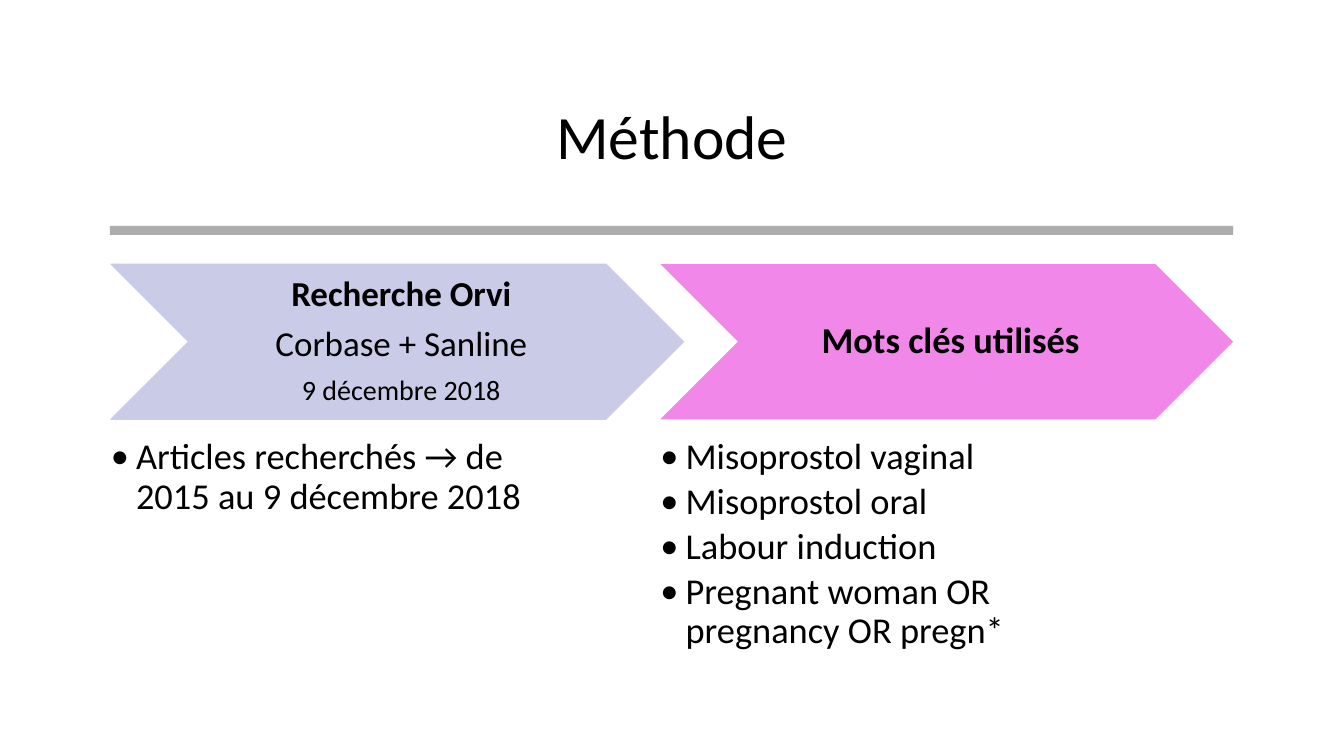
"""Build the "Méthode" slide: two chevrons with bulleted details below."""
from lxml import etree
from pptx import Presentation
from pptx import util as u
from pptx.dml.color import RGBColor
from pptx.enum import shapes, text
from pptx.oxml import ns


def paint(fill, color):
    fill.solid()
    fill.fore_color.rgb = RGBColor.from_string(color)


def write(tf, lines, margins, anchor, **fmt):
    tf.word_wrap = True
    tf.vertical_anchor = anchor
    for side, margin in zip(("left", "top", "right", "bottom"), margins):
        setattr(tf, f"margin_{side}", u.Inches(margin))
    for i, (line, size, bold) in enumerate(lines):
        p = tf.paragraphs[0] if i == 0 else tf.add_paragraph()
        p.line_spacing = 0.9
        for name, value in fmt.items():
            setattr(p, name, value)
        r = p.add_run()
        r.text = line
        for name, value in {"name": "Calibri", "size": u.Pt(size), "bold": bold}.items():
            setattr(r.font, name, value)
        paint(r.font.fill, "000000")


prs = Presentation()
prs.slide_width, prs.slide_height = u.Inches(13.33), u.Inches(7.5)
slide = prs.slides.add_slide(prs.slide_layouts[5])
CENTER, MIDDLE = text.PP_ALIGN.CENTER, text.MSO_ANCHOR.MIDDLE

title = slide.shapes.title
title.left, title.top, title.width, title.height = map(u.Inches, (0.95, 0.66, 11.43, 1.45))
write(title.text_frame, [("Méthode", 44, False)], (0.1, 0.05, 0.1, 0.05), MIDDLE,
      alignment=CENTER)

rule = slide.shapes.add_shape(
    shapes.MSO_SHAPE.RECTANGLE, *map(u.Inches, (1.09, 2.24, 11.14, 0.09)))
rule.shadow.inherit = False
paint(rule.fill, "808080")
rule.line.fill.background()
gray = rule._element.spPr.find(".//" + ns.qn("a:srgbClr"))
etree.SubElement(gray, ns.qn("a:alpha")).set("val", "65000")

columns = [
    (1.1, "C9CBE7", True,
     [("Recherche Orvi", 25, True), ("Corbase + Sanline", 25, False),
      ("9 décembre 2018", 20, False)],
     ["Articles recherchés → de 2015 au 9 décembre 2018"]),
    (6.55, "F187E9", False,
     [("Mots clés utilisés", 26, True)],
     ["Misoprostol vaginal", "Misoprostol oral", "Labour induction",
      "Pregnant woman OR pregnancy OR pregn*"]),
]
for left, color, outlined, heading, items in columns:
    chevron = slide.shapes.add_shape(
        shapes.MSO_SHAPE.CHEVRON, *map(u.Inches, (left, 2.62, 5.68, 1.54)))
    chevron.shadow.inherit = False
    paint(chevron.fill, color)
    if outlined:
        paint(chevron.line.fill, color)
        chevron.line.width = u.Pt(0.75)
    else:
        chevron.line.fill.background()

    label = slide.shapes.add_textbox(*map(u.Inches, (left + 0.77, 2.62, 4.15, 1.54)))
    write(label.text_frame, heading, (0.11, 0.04, 0.04, 0.04), MIDDLE,
          alignment=CENTER, space_after=u.Pt(8.75))

    details = slide.shapes.add_textbox(*map(u.Inches, (left, 4.35, 4.54, 2.2)))
    write(details.text_frame, [(item, 26, False) for item in items], (0, 0, 0, 0),
          text.MSO_ANCHOR.TOP, space_after=u.Pt(4))
    for p in details.text_frame.paragraphs:
        pPr = p._p.get_or_add_pPr()
        pPr.set("marL", str(u.Inches(0.25)))
        pPr.set("indent", str(u.Inches(-0.25)))
        etree.SubElement(pPr, ns.qn("a:buFont")).set("typeface", "Calibri")
        etree.SubElement(pPr, ns.qn("a:buChar")).set("char", "•")

prs.save("out.pptx")
